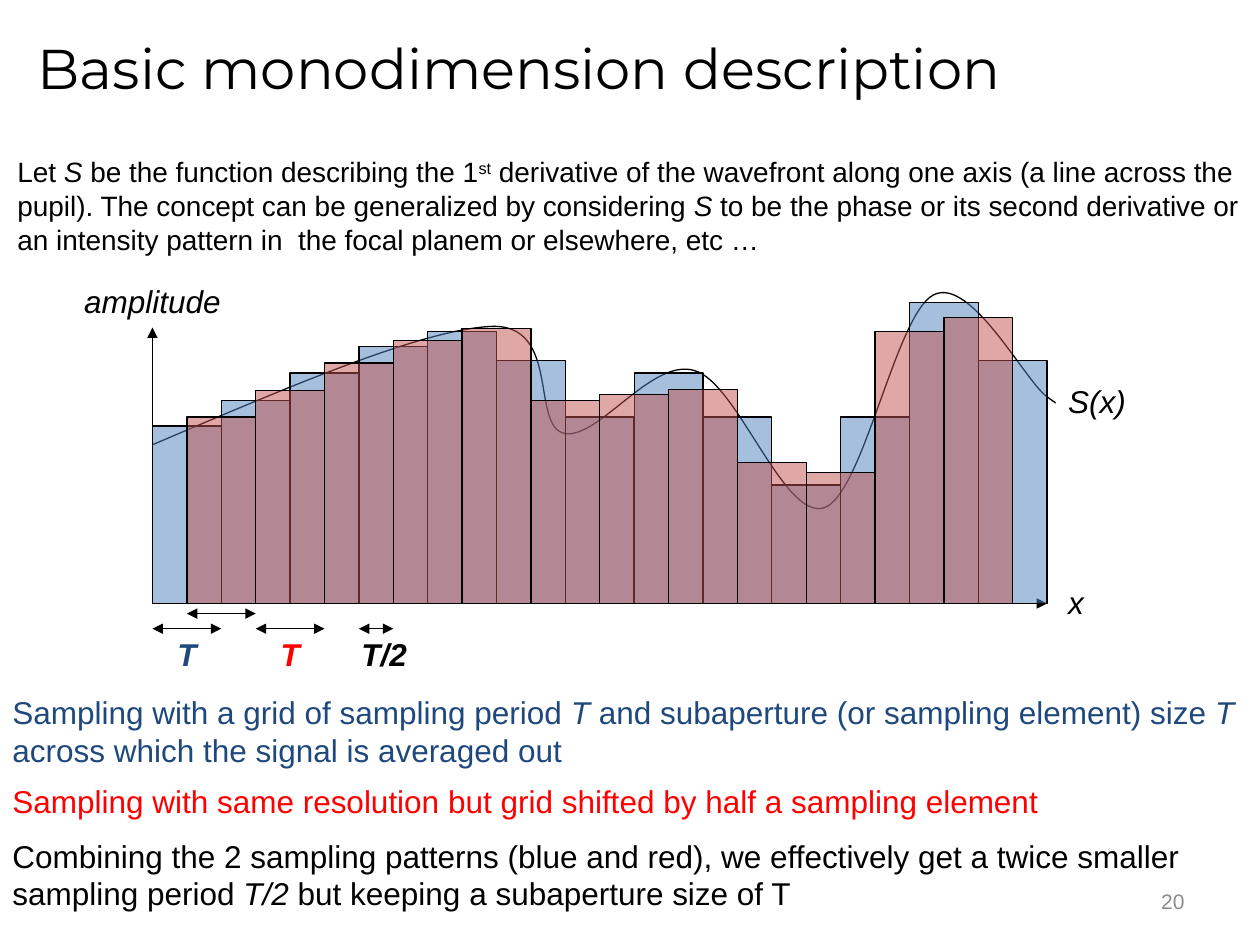
from collections import namedtuple

from lxml.etree import SubElement
from pptx import Presentation
from pptx.dml.color import RGBColor
from pptx.enum.shapes import MSO_CONNECTOR as Connector, MSO_SHAPE as Shape
from pptx.enum.text import MSO_ANCHOR as Anchor, PP_ALIGN as Align
from pptx.oxml.ns import qn
from pptx.util import Inches, Pt

Box = namedtuple("Box", "left top width height")

BLACK = RGBColor(0x00, 0x00, 0x00)
WHITE = RGBColor(0xFF, 0xFF, 0xFF)
GRAY = RGBColor(0x8C, 0x8C, 0x8C)
NAVY = RGBColor(0x1F, 0x49, 0x7D)
RED = RGBColor(0xFF, 0x00, 0x00)
BLUE_BAR = RGBColor(0x4F, 0x81, 0xBD)
RED_BAR = RGBColor(0xC0, 0x50, 0x4D)

PERIODS = 13
BLUE_HEIGHTS = [1.41, 1.61, 1.83, 2.04, 2.16, 1.93, 1.48, 1.83, 1.48, 0.94, 1.48, 2.39, 1.93]
RED_HEIGHTS = [1.48, 1.69, 1.91, 2.09, 2.18, 1.61, 1.66, 1.7, 1.12, 1.04, 2.16, 2.27]
SIGNAL = [
    (0, 1.26), (1.08, 1.72), (2.15, 2.18), (2.7, 2.2),
    (3.24, 2.21), (3, 1.41), (3.27, 1.35),
    (3.54, 1.3), (3.96, 1.95), (4.3, 1.85),
    (4.64, 1.76), (5.01, 0.66), (5.33, 0.76),
    (5.64, 0.86), (5.9, 2.3), (6.2, 2.45),
    (6.49, 2.6), (6.92, 1.78), (7.09, 1.65),
    (7.25, 1.52), (7.23, 1.6), (7.21, 1.67),
]


def add_text(shapes, box, runs, size=18, color=BLACK, font="Arial", bold=False,
             wrap=True, anchor=Anchor.TOP, align=Align.LEFT):
    label = shapes.add_textbox(*(Inches(v) for v in box))
    frame = label.text_frame
    frame.word_wrap = wrap
    frame.vertical_anchor = anchor
    paragraph = frame.paragraphs[0]
    paragraph.alignment = align
    for text, style in runs:
        run = paragraph.add_run()
        run.text = text
        run.font.name = font
        run.font.size = Pt(size)
        run.font.bold = bold
        run.font.italic = style == "italic"
        run.font.color.rgb = color
        if style == "super":
            run.font._element.set("baseline", "30000")
    return label


def add_arrow(shapes, start, end, ends=("tailEnd",)):
    arrow = shapes.add_connector(
        Connector.STRAIGHT, *(Inches(v) for v in (*start, *end)))
    arrow.line.color.rgb = BLACK
    arrow.line.width = Pt(0.75)
    outline = arrow.line._get_or_add_ln()
    for name in ends:
        SubElement(outline, qn(f"a:{name}"), type="triangle")
    SubElement(arrow._element.spPr, qn("a:effectLst"))


def add_bars(shapes, plot, heights, shift, color):
    period = plot.width / PERIODS
    base = plot.top + plot.height
    for index, height in enumerate(heights):
        left = plot.left + (index + shift) * period
        bar = shapes.add_shape(
            Shape.RECTANGLE, Inches(left), Inches(base - height), Inches(period), Inches(height))
        bar.shadow.inherit = False
        bar.fill.solid()
        bar.fill.fore_color.rgb = color
        shade = bar._element.spPr.find(qn("a:solidFill"))[0]
        SubElement(shade, qn("a:alpha"), val="50000")
        bar.line.color.rgb = BLACK
        bar.line.width = Pt(0.75)


def add_signal(shapes, plot):
    base = plot.top + plot.height
    points = [(Inches(plot.left + x), Inches(base - y)) for x, y in SIGNAL]
    knots = points[::3]
    builder = shapes.build_freeform(*knots[0])
    builder.add_line_segments(knots[1:], close=False)
    signal = builder.convert_to_shape()
    outline = signal._element.spPr.find(".//" + qn("a:path"))
    for segment in outline.findall(qn("a:lnTo")):
        outline.remove(segment)
    for start in range(1, len(points), 3):
        curve = SubElement(outline, qn("a:cubicBezTo"))
        for x, y in points[start:start + 3]:
            SubElement(curve, qn("a:pt"), x=str(x - signal.left), y=str(y - signal.top))
    signal.shadow.inherit = False
    signal.fill.background()
    signal.line.color.rgb = BLACK
    signal.line.width = Pt(0.75)


def add_axes(shapes, plot):
    base = plot.top + plot.height
    origin = (plot.left, base)
    add_arrow(shapes, origin, (plot.left, plot.top + 0.28))
    add_arrow(shapes, origin, (plot.left + plot.width, base))


def add_axis_labels(shapes, plot):
    right = plot.left + plot.width + 0.07
    labels = [
        ("x", Box(right, plot.top + 2.26, 0.33, 0.4)),
        ("amplitude", Box(plot.left - 0.64, plot.top - 0.13, 1.3, 0.4)),
        ("S(x)", Box(right, plot.top + 0.66, 0.66, 0.4)),
    ]
    for text, box in labels:
        label = add_text(shapes, box, [(text, "italic")], wrap=False)
    label.fill.solid()
    label.fill.fore_color.rgb = WHITE


def add_span(shapes, plot, start, end, depth=0.2):
    period = plot.width / PERIODS
    level = plot.top + plot.height + depth
    add_arrow(shapes, (plot.left + start * period, level),
              (plot.left + end * period, level), ("headEnd", "tailEnd"))


def add_span_label(shapes, plot, text, offset, width, color):
    add_text(shapes, Box(plot.left + offset, plot.top + plot.height + 0.2, width, 0.4),
             [(text, "italic")], color=color, bold=True, wrap=False)


def add_blue_sampling(shapes, plot, caption):
    add_bars(shapes, plot, BLUE_HEIGHTS, 0, BLUE_BAR)
    add_text(shapes, caption, [
        ("Sampling with a grid of sampling period ", ""), ("T", "italic"),
        (" and subaperture (or sampling element) size ", ""), ("T ", "italic"),
        ("across which the signal is averaged out", ""),
    ], color=NAVY)
    add_span(shapes, plot, 0, 1)
    add_span_label(shapes, plot, "T", 0.1, 0.36, NAVY)


def add_red_sampling(shapes, plot, caption):
    add_bars(shapes, plot, RED_HEIGHTS, 0.5, RED_BAR)
    add_text(shapes, caption, [
        ("Sampling with same resolution but grid shifted by half a sampling element", ""),
    ], color=RED)
    add_span(shapes, plot, 1.5, 2.5)
    add_span_label(shapes, plot, "T", 0.92, 0.36, RED)


def add_combined_sampling(shapes, plot, caption):
    add_span(shapes, plot, 3, 3.5)
    add_span_label(shapes, plot, "T/2", 1.56, 0.57, BLACK)
    add_text(shapes, caption, [
        ("Combining the 2 sampling patterns (blue and red), we effectively get "
         "a twice smaller sampling period ", ""),
        ("T/2", "italic"), (" but keeping a subaperture size of T", ""),
    ])


def add_intro(shapes, box):
    add_text(shapes, box, [
        ("Let ", ""), ("S", "italic"),
        (" be the function describing the 1", ""), ("st", "super"),
        (" derivative of the wavefront along one axis (a line across the pupil). "
         "The concept can be generalized by considering ", ""),
        ("S", "italic"),
        (" to be the phase or its second derivative or an intensity pattern in  "
         "the focal planem or elsewhere, etc …", ""),
    ], size=16)


def main():
    deck = Presentation()
    deck.slide_width, deck.slide_height = Inches(10), Inches(7.5)
    shapes = deck.slides.add_slide(deck.slide_layouts[6]).shapes
    plot = Box(1.21, 2.32, 7.1, 2.47)
    add_text(shapes, Box(7.17, 6.95, 2.33, 0.4), [("20", "")], size=12, color=GRAY,
             anchor=Anchor.MIDDLE, align=Align.RIGHT)
    add_text(shapes, Box(0.2, 0, 8.58, 1.07), [("Basic monodimension description", "")],
             size=32, font="Montserrat", anchor=Anchor.MIDDLE)
    add_axes(shapes, plot)
    add_signal(shapes, plot)
    add_blue_sampling(shapes, plot, Box(0, 5.45, 10, 0.71))
    add_intro(shapes, Box(0.04, 1.18, 9.96, 0.91))
    add_axis_labels(shapes, plot)
    add_red_sampling(shapes.add_group_shape().shapes, plot, Box(0, 6.16, 9.49, 0.71))
    add_span(shapes, plot, 0.5, 1.5, 0.08)
    add_combined_sampling(shapes.add_group_shape().shapes, plot, Box(0, 6.59, 10, 0.71))
    deck.save("out.pptx")


if __name__ == "__main__":
    main()
